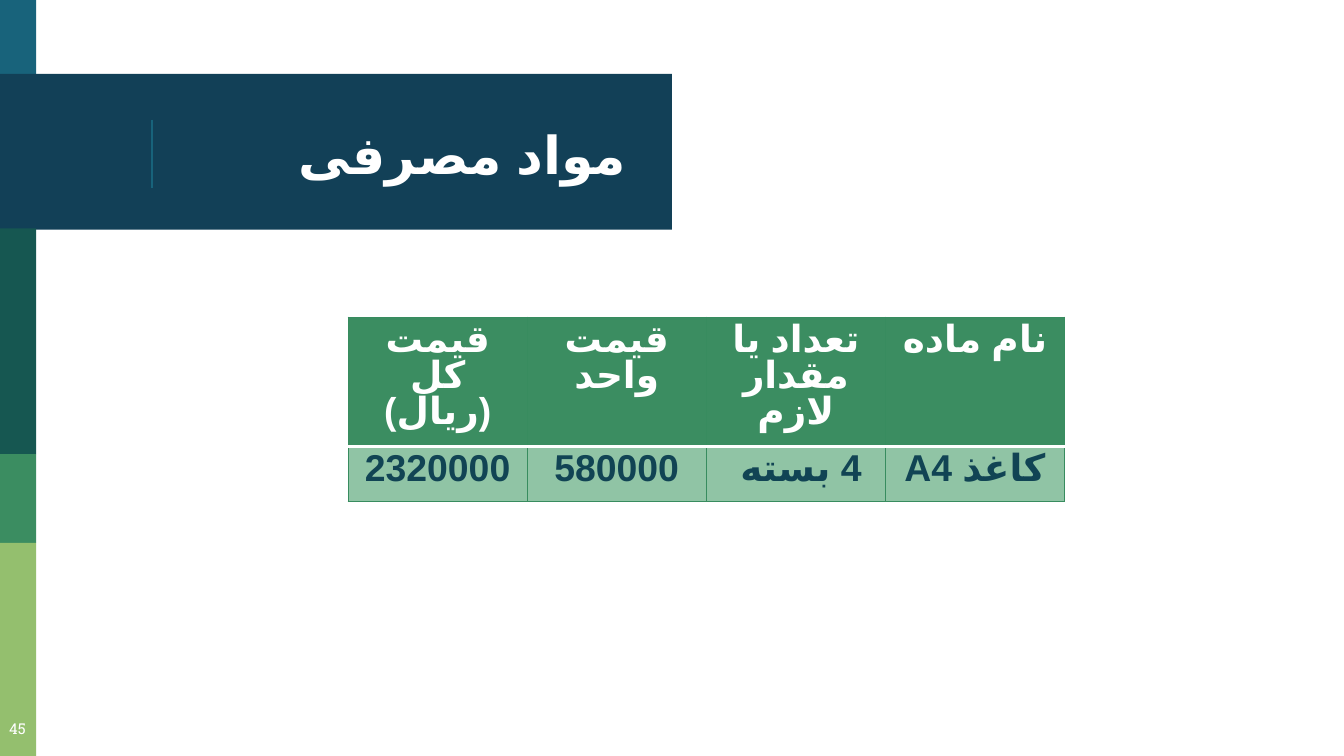
import pptx
import pptx.dml.color
import pptx.enum.lang
import pptx.enum.shapes
import pptx.enum.text
import pptx.oxml
import pptx.oxml.ns
import pptx.util
from pptx.util import Inches

ALIGN = pptx.enum.text.PP_ALIGN


def rgb(hex_colour):
    return pptx.dml.color.RGBColor.from_string(hex_colour)


def format_paragraph(paragraph, size, face, colour, align, bold=False, rtl=False):
    paragraph.alignment = align
    font = paragraph.font
    font.size, font.name, font.bold = pptx.util.Pt(size), face, bold
    font.color.rgb = rgb(colour)
    if rtl:
        paragraph._p.get_or_add_pPr().set("rtl", "1")
        # Right-to-left text takes its face from the complex-script font
        for run in paragraph.runs:
            run.font.language_id = pptx.enum.lang.MSO_LANGUAGE_ID.FARSI
            run_properties = run._r.get_or_add_rPr()
            script_font = run_properties.makeelement(pptx.oxml.ns.qn("a:cs"))
            script_font.set("typeface", "Arial")
            run_properties.append(script_font)


prs = pptx.Presentation()
prs.slide_width, prs.slide_height = Inches(10), Inches(5.625)
slide = prs.slides.add_slide(prs.slide_layouts[5])

# Side strip and title banner: top, width, height, colour
bands = [
    (0, 0.27, 0.58, "18637B"),
    (0.55, 5, 1.16, "124057"),
    (1.7, 0.27, 1.68, "165751"),
    (3.38, 0.27, 0.66, "3B8D61"),
    (4.04, 0.27, 1.59, "94BF6E"),
]
for top, width, height, colour in bands:
    band = slide.shapes.add_shape(
        pptx.enum.shapes.MSO_SHAPE.RECTANGLE,
        Inches(0), Inches(top), Inches(width), Inches(height))
    band.shadow.inherit = False
    band.fill.solid()
    band.fill.fore_color.rgb = rgb(colour)
    band.line.fill.background()

divider = slide.shapes.add_connector(
    pptx.enum.shapes.MSO_CONNECTOR.STRAIGHT,
    Inches(1.13), Inches(0.89), Inches(1.13), Inches(1.4))
divider.line.color.rgb = rgb("18637B")
divider.line.width = pptx.util.Pt(0.75)
divider_properties = divider._element.spPr
divider_properties.append(divider_properties.makeelement(pptx.oxml.ns.qn("a:effectLst")))

# Title, brought in front of the banner
title = slide.shapes.title
title.left, title.top, title.width, title.height = map(Inches, (1.25, 0.58, 3.51, 1.12))
title.text = "مواد مصرفی"
slide.shapes._spTree.append(title._element)
page_number = slide.shapes.add_textbox(Inches(-0.06), Inches(5.27), Inches(0.38), Inches(0.35))
page_number.text_frame.text = "45"
for frame in (title.text_frame, page_number.text_frame):
    frame.word_wrap = True
    frame.margin_left = frame.margin_right = Inches(0.1)
    frame.margin_top = frame.margin_bottom = Inches(0.1)
page_number.text_frame.margin_top = Inches(0.13)
title.text_frame.vertical_anchor = pptx.enum.text.MSO_ANCHOR.MIDDLE
# In right-to-left paragraphs LEFT and RIGHT keep their physical sides
format_paragraph(title.text_frame.paragraphs[0], 28, "Roboto Slab", "FFFFFF",
                 ALIGN.RIGHT, bold=True, rtl=True)
format_paragraph(page_number.text_frame.paragraphs[0], 8, "Roboto Slab", "FFFFFF", ALIGN.CENTER)

# Price table
rows = [
    ["قيمت كل (ريال)", "قيمت واحد", "تعداد يا مقدار لازم", "نام ماده"],
    ["2320000", "580000", "4 بسته ", "کاغذ A4"],
]
row_styles = [(0.94, "3B8D61", "FFFFFF"), (0.41, "90C4A5", "114454")]
table_width = 5.33
prices = slide.shapes.add_table(
    2, 4, Inches(2.59), Inches(2.36), Inches(table_width), Inches(1.35)).table
for column in prices.columns:
    column.width = Inches(table_width / 4)

for r, (texts, (height, fill, ink)) in enumerate(zip(rows, row_styles)):
    prices.rows[r].height = Inches(height)
    for c, text in enumerate(texts):
        cell = prices.cell(r, c)
        cell.text = text
        face = "Lato" if r == 0 and c < 3 else "Arial"
        paragraph = cell.text_frame.paragraphs[0]
        format_paragraph(paragraph, 20, face, ink, ALIGN.CENTER, bold=True, rtl=True)
        paragraph.line_spacing = 0.86
        cell.fill.solid()
        cell.fill.fore_color.rgb = rgb(fill)
        header_rule = "lnB" if r == 0 else "lnT"
        for position, side in enumerate(("lnL", "lnR", "lnT", "lnB")):
            colour, points = ("FFFFFF", 2) if side == header_rule else ("388C5F", 0.75)
            border = pptx.oxml.parse_xml(
                f'<a:{side} {pptx.oxml.ns.nsdecls("a")} w="{pptx.util.Pt(points)}">'
                f'<a:solidFill><a:srgbClr val="{colour}"/></a:solidFill></a:{side}>')
            cell._tc.get_or_add_tcPr().insert(position, border)

prs.save("out.pptx")
